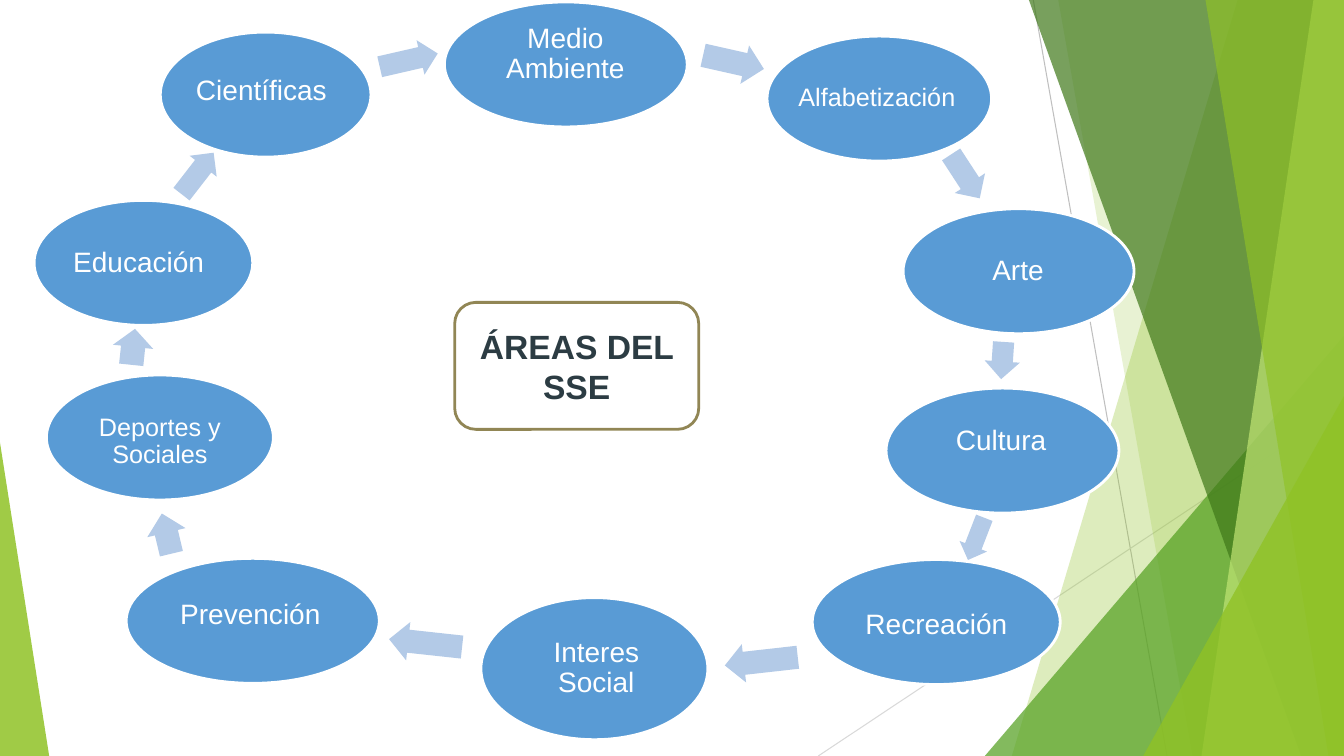
"""Build the slide with the ring of areas of the SSE."""
from dataclasses import dataclass
from typing import Optional

from lxml import etree
from pptx import Presentation
from pptx import util as u
from pptx.dml import color as dml
from pptx.enum import shapes, text
from pptx.oxml import ns

WIDTH, HEIGHT = 33.87, 19.05
FONT = "Arial"
WHITE, BLUE, PALE_BLUE = "FFFFFF", "599BD5", "B3CAE7"
OVAL_HEIGHT, LABEL_HEIGHT = 3.15, 2.24


@dataclass(frozen=True)
class Box:
    left: float
    top: float
    width: float
    height: float


@dataclass(frozen=True)
class Thread:
    start: tuple[float, float]
    end: tuple[float, float]
    color: str


@dataclass(frozen=True)
class Panel:
    top_x: float
    bottom_x: float
    color: str
    opacity: int


@dataclass(frozen=True)
class Wedge:
    box: Box
    apex: float
    color: str
    opacity: int


@dataclass(frozen=True)
class Area:
    name: str
    oval: Box
    label: Box
    arrow: Box
    angle: float
    size: int = 20


def oval_box(left: float, top: float, width: float, height: float = OVAL_HEIGHT) -> Box:
    """Return the frame of an oval, of the common height by default."""
    return Box(left, top, width, height)


def label_box(left: float, top: float, width: float) -> Box:
    """Return the frame of a label."""
    return Box(left, top, width, LABEL_HEIGHT)


THREADS = [
    Thread((26.04, 0), (29.41, HEIGHT), "BFBFBF"),
    Thread((WIDTH, 10.24), (20.62, HEIGHT), "D9D9D9"),
]
FACETS = [
    Panel(31.19, 25.5, "90C226", 30),
    Panel(26.67, 30.05, "90C226", 20),
    Wedge(Box(24.82, 8.46, 9.05, 10.59), 1, "54A021", 72),
    Panel(25.93, 32.79, "3F7819", 70),
    Panel(33.1, 30.28, "C0E474", 70),
    Panel(30.38, 33.48, "90C226", 65),
    Wedge(Box(28.81, 9.98, 5.06, 9.07), 1, "90C226", 80),
    Wedge(Box(0, 11.15, 1.24, 7.9), 0, "90C226", 85),
]
AREAS = [
    Area("Medio Ambiente", oval_box(11.2, 0.05, 6.12), label_box(12.09, 0.25, 4.32),
         Box(17.7, 1.07, 1.57, 0.99), 12.7),
    Area("Alfabetización", oval_box(19.33, 0.91, 5.66), label_box(19.89, 1.35, 4.42),
         Box(23.67, 3.99, 1.32, 0.91), 56.9, 18),
    Area("Arte", oval_box(22.76, 5.26, 5.82), label_box(23.6, 5.72, 4.11),
         Box(24.79, 8.64, 0.94, 0.89), 93.8),
    Area("Cultura", oval_box(22.33, 9.78, 5.87), label_box(23.16, 10.01, 4.14),
         Box(24.03, 13.21, 1.14, 0.74), 111.2),
    Area("Recreación", oval_box(20.47, 14.1, 6.25), label_box(21.39, 14.63, 4.42),
         Box(18.26, 16.18, 1.85, 0.97), 173.6),
    Area("Interes\nSocial", oval_box(12.12, 15.06, 5.72, 3.58), label_box(12.78, 15.72, 4.5),
         Box(9.8, 15.72, 1.85, 0.97), 186.2),
    Area("Prevención", oval_box(3.18, 14.07, 6.38), label_box(4.06, 14.4, 4.5),
         Box(3.68, 12.95, 1.04, 0.99), 256.6),
    Area("Deportes y Sociales", oval_box(1.17, 9.45, 5.72), label_box(2.01, 10.01, 4.04),
         Box(2.9, 8.23, 0.91, 1.02), 276, 18),
    Area("Educación", oval_box(0.86, 5.05, 5.51), label_box(1.54, 5.51, 3.91),
         Box(4.32, 3.94, 1.32, 0.86), 307.8),
    Area("Científicas", oval_box(4.04, 0.81, 5.31), label_box(4.71, 1.19, 3.76),
         Box(9.55, 1.07, 1.5, 0.89), 347.1),
]


def rgb(value: str) -> dml.RGBColor:
    """Return the colour for a hex string."""
    return dml.RGBColor.from_string(value)


def frame(box: Box) -> tuple[u.Cm, ...]:
    """Return left, top, width and height as lengths."""
    return tuple(u.Cm(value) for value in (box.left, box.top, box.width, box.height))


def paint(shape, fill: str, line: Optional[str] = None, opacity: int = 100) -> None:
    """Set the fill, outline and opacity of a shape and remove its shadow."""
    shape.shadow.inherit = False
    shape.fill.solid()
    shape.fill.fore_color.rgb = rgb(fill)
    if opacity < 100:
        tint = shape.fill._xPr.find(".//" + ns.qn("a:srgbClr"))
        etree.SubElement(tint, ns.qn("a:alpha"), val=str(opacity * 1000))
    if line:
        shape.line.color.rgb = rgb(line)
        shape.line.width = u.Pt(2)
    else:
        shape.line.fill.background()


def write(shape, wording: str, size: int, color: str, bold: bool = False,
          spacing: float = 1.0) -> None:
    """Write centred text in a shape."""
    text_frame = shape.text_frame
    text_frame.word_wrap = True
    text_frame.vertical_anchor = text.MSO_ANCHOR.MIDDLE
    text_frame.text = wording
    for paragraph in text_frame.paragraphs:
        paragraph.alignment = text.PP_ALIGN.CENTER
        paragraph.line_spacing = spacing
        paragraph.font.name = FONT
        paragraph.font.size = u.Pt(size)
        paragraph.font.bold = bold
        paragraph.font.color.rgb = rgb(color)


def draw_thread(slide, thread: Thread) -> None:
    """Draw one thin background line."""
    ends = [u.Cm(value) for value in thread.start + thread.end]
    connector = slide.shapes.add_connector(shapes.MSO_CONNECTOR.STRAIGHT, *ends)
    connector.line.color.rgb = rgb(thread.color)
    connector.line.width = u.Pt(0.75)
    etree.SubElement(connector._element.spPr, ns.qn("a:effectLst"))


def draw_panel(slide, panel: Panel) -> None:
    """Draw one translucent panel that reaches the right edge."""
    corners = [(panel.top_x, 0), (WIDTH, 0), (WIDTH, HEIGHT), (panel.bottom_x, HEIGHT)]
    points = [(u.Cm(x), u.Cm(y)) for x, y in corners]
    builder = slide.shapes.build_freeform(*points[0])
    builder.add_line_segments(points[1:], close=True)
    paint(builder.convert_to_shape(), panel.color, opacity=panel.opacity)


def draw_wedge(slide, wedge: Wedge) -> None:
    """Draw one translucent triangle."""
    shape = slide.shapes.add_shape(shapes.MSO_SHAPE.ISOSCELES_TRIANGLE, *frame(wedge.box))
    shape.adjustments[0] = wedge.apex
    paint(shape, wedge.color, opacity=wedge.opacity)


def draw_area(slide, area: Area) -> None:
    """Draw an oval, its label and the arrow to the next area."""
    paint(slide.shapes.add_shape(shapes.MSO_SHAPE.OVAL, *frame(area.oval)), BLUE, WHITE)
    label = slide.shapes.add_textbox(*frame(area.label))
    write(label, area.name, area.size, WHITE, spacing=0.9)
    for side in ("left", "top", "right", "bottom"):
        setattr(label.text_frame, f"margin_{side}", u.Cm(0.07))
    arrow = slide.shapes.add_shape(shapes.MSO_SHAPE.RIGHT_ARROW, *frame(area.arrow))
    arrow.adjustments[0] = 0.6
    arrow.rotation = area.angle
    paint(arrow, PALE_BLUE)


def main() -> None:
    """Build and save the presentation."""
    presentation = Presentation()
    presentation.slide_width, presentation.slide_height = u.Cm(WIDTH), u.Cm(HEIGHT)
    slide = presentation.slides.add_slide(presentation.slide_layouts[6])
    for thread in THREADS:
        draw_thread(slide, thread)
    for facet in FACETS:
        draw = draw_panel if isinstance(facet, Panel) else draw_wedge
        draw(slide, facet)
    for area in AREAS:
        draw_area(slide, area)
    center = slide.shapes.add_shape(
        shapes.MSO_SHAPE.ROUNDED_RECTANGLE, *frame(Box(11.46, 7.62, 6.15, 3.2)))
    paint(center, WHITE, "918655")
    write(center, "ÁREAS DEL SSE", 24, "2C3C43", bold=True)
    presentation.save("out.pptx")


if __name__ == "__main__":
    main()
